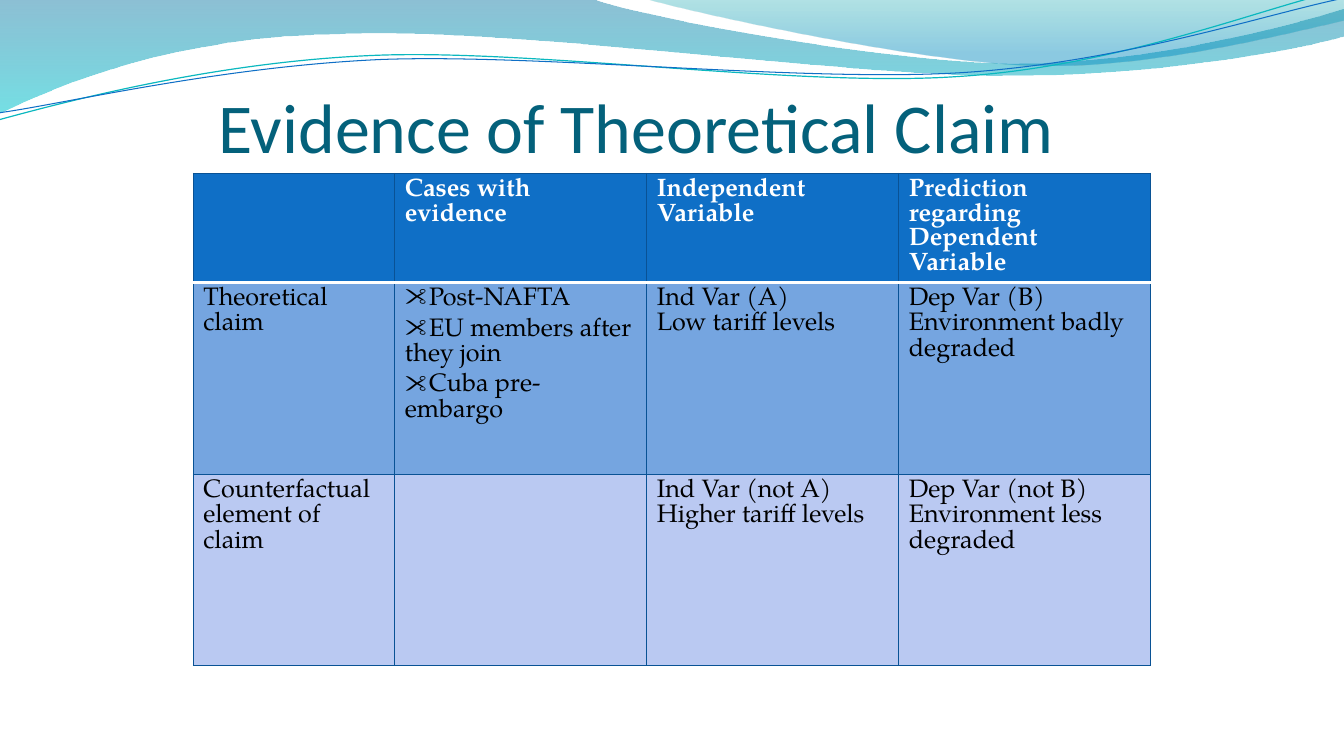
from lxml import etree
from pptx import Presentation
from pptx.dml.color import RGBColor
from pptx.enum.text import MSO_ANCHOR, MSO_AUTO_SIZE, PP_ALIGN
from pptx.oxml.ns import qn
from pptx.util import Cm, Pt

BOTTOM = MSO_ANCHOR.BOTTOM
LEFT = PP_ALIGN.LEFT
NO_AUTOFIT = MSO_AUTO_SIZE.NONE

HEADING = "Evidence of Theoretical Claim"
HEADING_FONT, BODY_FONT, BULLET_FONT = "Calibri", "TeX Gyre Pagella", "Wingdings"
BULLET = "•"

CLAIMS = [
    [[], ["Cases with evidence"], ["Independent Variable"],
     ["Prediction regarding Dependent Variable"]],
    [["Theoretical claim"],
     ["•Post-NAFTA", "•EU members after they join", "•Cuba pre-embargo"],
     ["Ind Var (A)", "Low tariff levels"],
     ["Dep Var (B)", "Environment badly degraded"]],
    [["Counterfactual element of claim"], [],
     ["Ind Var (not A)", "Higher tariff levels"],
     ["Dep Var (not B) Environment less degraded"]],
]
COLUMN_WIDTHS = [5.08, 6.35, 6.35, 6.35]
ROW_HEIGHTS = [2.7, 4.83, 4.83]
ROW_FILLS = ["0F6FC6", "75A5E0", "BAC9F2"]
GRID_LINE = ("095295", 0.75)
HEADER_RULE = ("FFFFFF", 2)

WAVES = [
    ([(0, 0), (14.91, -0.03),
      (16.1, 0.43, 22.48, 1.6, 25.68, 1.6),
      (28.91, 1.6, 32.46, 0.66, 33.86, 0.23), (33.91, 0.91),
      (33.3, 1.12, 29.46, 1.93, 25.25, 1.91),
      (21.06, 1.91, 12.93, 0.71, 8.71, 0.86),
      (4.37, 0.91, 1.55, 2.11, -0.03, 2.87)],
     [(0, "0074A1", 45), (1, "00C6CF", 55)]),
    ([(16.23, -0.03),
      (17.25, 0.28, 23.09, 1.57, 26.04, 1.65),
      (28.98, 1.75, 32.56, 0.81, 33.86, 0.53), (33.86, 0)],
     [(0, "00A1A9", 30), (0.8, "008BBF", 45)]),
]
RIPPLES = [
    ([(-0.03, 3.02),
      (1.63, 2.57, 5.36, 1.57, 9.37, 1.4),
      (13.39, 1.22, 20.07, 2.21, 24.13, 1.93),
      (28.19, 1.68, 31.8, 0.2, 33.81, -0.25)], "0AB8BF", 0.85),
    ([(0, 2.84),
      (1.6, 2.62, 5.54, 1.68, 9.6, 1.5),
      (13.64, 1.35, 20.22, 2.08, 24.26, 1.83),
      (28.32, 1.57, 31.88, 0.36, 33.88, -0.05)], "0F6FC6", 0.75),
]


def color(hex_value):
    return RGBColor.from_string(hex_value)


def add_outline(slide, outline, closed):
    corners = [(Cm(segment[-2]), Cm(segment[-1])) for segment in outline]
    builder = slide.shapes.build_freeform(*corners[0])
    builder.add_line_segments(corners[1:], close=closed)
    shape = builder.convert_to_shape()
    shape.shadow.inherit = False
    straights = list(shape.element.spPr.iter(qn("a:lnTo")))
    for straight, segment in zip(straights, outline[1:]):
        if len(segment) == 6:
            bend(straight, segment, shape.left, shape.top)
    return shape


def bend(straight, segment, left, top):
    curve = etree.Element(qn("a:cubicBezTo"))
    for x, y in zip(segment[::2], segment[1::2]):
        etree.SubElement(curve, qn("a:pt"), x=str(Cm(x) - left), y=str(Cm(y) - top))
    straight.getparent().replace(straight, curve)


def add_wave(slide, outline, stops):
    wave = add_outline(slide, outline, True)
    wave.line.fill.background()
    wave.fill.gradient()
    wave.fill.gradient_angle = 270
    for stop, (position, hex_value, _) in zip(wave.fill.gradient_stops, stops):
        stop.position = position
        stop.color.rgb = color(hex_value)
    for tint, (_, _, opacity) in zip(wave.element.spPr.iter(qn("a:srgbClr")), stops):
        etree.SubElement(tint, qn("a:alpha")).set("val", str(opacity * 1000))


def add_ripple(slide, outline, hex_value, width):
    ripple = add_outline(slide, outline, False)
    ripple.fill.background()
    ripple.line.color.rgb = color(hex_value)
    ripple.line.width = Pt(width)


def set_font(paragraph, name, size, hex_value, bold=False):
    font = paragraph.font
    font.name, font.size, font.bold = name, Pt(size), bold
    font.color.rgb = color(hex_value)


def set_borders(cell, row):
    sides = {"a:lnL": GRID_LINE, "a:lnR": GRID_LINE,
             "a:lnT": HEADER_RULE if row == 1 else GRID_LINE,
             "a:lnB": HEADER_RULE if row == 0 else GRID_LINE}
    properties = cell._tc.get_or_add_tcPr()
    for place, (side, (hex_value, width)) in enumerate(sides.items()):
        border = etree.Element(qn(side), w=str(Pt(width)))
        fill = etree.SubElement(border, qn("a:solidFill"))
        etree.SubElement(fill, qn("a:srgbClr")).set("val", hex_value)
        properties.insert(place, border)


def set_bullet(paragraph):
    properties = paragraph._p.get_or_add_pPr()
    properties.set("marL", "0")
    properties.set("indent", "0")
    etree.SubElement(properties, qn("a:buFont"), typeface=BULLET_FONT, charset="2")
    etree.SubElement(properties, qn("a:buChar"), char=BULLET)
    paragraph.space_before = Pt(3.6)


def fill_cell(cell, row, lines):
    cell.fill.solid()
    cell.fill.fore_color.rgb = color(ROW_FILLS[row])
    set_borders(cell, row)
    cell.text = "\n".join(line.lstrip(BULLET) for line in lines)
    for paragraph, line in zip(cell.text_frame.paragraphs, lines):
        if line.startswith(BULLET):
            set_bullet(paragraph)
        set_font(paragraph, BODY_FONT, 18, "FFFFFF" if row == 0 else "000000", row == 0)


def add_claims(slide):
    table = slide.shapes.add_table(
        len(ROW_HEIGHTS), len(COLUMN_WIDTHS), Cm(4.87), Cm(4.37),
        Cm(sum(COLUMN_WIDTHS)), Cm(sum(ROW_HEIGHTS))).table
    for column, width in zip(table.columns, COLUMN_WIDTHS):
        column.width = Cm(width)
    for row, height in enumerate(ROW_HEIGHTS):
        table.rows[row].height = Cm(height)
        for column, lines in enumerate(CLAIMS[row]):
            fill_cell(table.cell(row, column), row, lines)


def place_heading(slide):
    heading = slide.shapes.title
    heading.element.getparent().append(heading.element)
    heading.left, heading.top, heading.width, heading.height = (
        Cm(5.5), Cm(1.06), Cm(22.86), Cm(3.17))
    frame = heading.text_frame
    frame.text = HEADING
    frame.auto_size = NO_AUTOFIT
    frame.vertical_anchor = BOTTOM
    frame.margin_left = frame.margin_right = frame.margin_bottom = 0
    frame.margin_top = Cm(0.13)
    frame.paragraphs[0].alignment = LEFT
    set_font(frame.paragraphs[0], HEADING_FONT, 50, "04617B")


def main():
    deck = Presentation()
    deck.slide_width, deck.slide_height = Cm(33.87), Cm(19.05)
    slide = deck.slides.add_slide(deck.slide_layouts[5])
    for outline, stops in WAVES:
        add_wave(slide, outline, stops)
    for outline, hex_value, width in RIPPLES:
        add_ripple(slide, outline, hex_value, width)
    place_heading(slide)
    add_claims(slide)
    deck.save("out.pptx")


if __name__ == "__main__":
    main()
